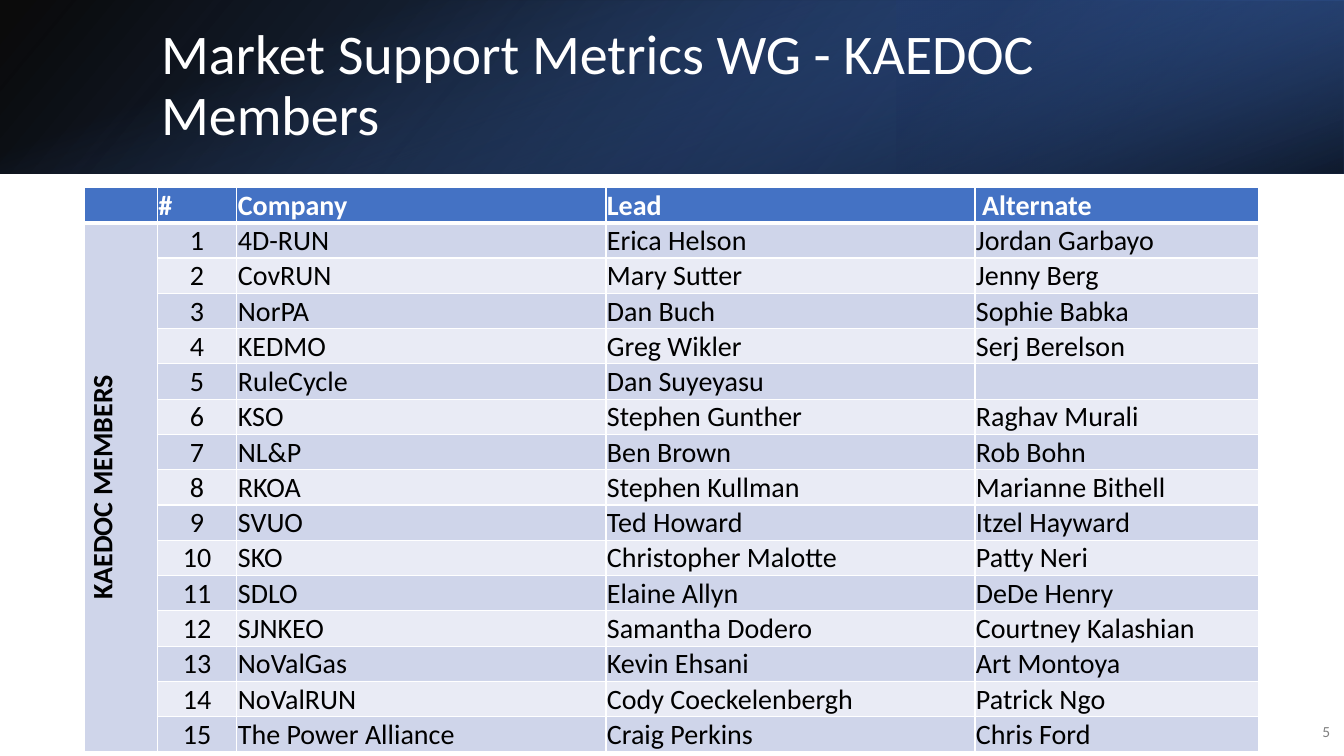
from lxml.etree import SubElement
from pptx import Presentation
from pptx.dml.color import RGBColor
from pptx.enum.shapes import MSO_SHAPE as SHAPE
from pptx.enum.text import MSO_ANCHOR as ANCHOR, PP_ALIGN as ALIGN
from pptx.oxml.ns import qn
from pptx.util import Inches, Pt


def rgb(value):
    return RGBColor.from_string(value)


def add_text(tf, text, size, color, bold=False, align=ALIGN.LEFT):
    p = tf.paragraphs[0]
    p.alignment = align
    p.font.size = Pt(size)
    r = p.add_run()
    r.text = text
    r.font.name = "Calibri"
    r.font.size = Pt(size)
    r.font.bold = bold
    r.font.color.rgb = rgb(color)
    return p


prs = Presentation()
prs.slide_width, prs.slide_height = Inches(13.33), Inches(7.5)
s = prs.slides.add_slide(prs.slide_layouts[6])

banner_layers = [
    ((0, 0, 13.33, 1.72), 0, True, 140, [(0, "000000", 96), (100, "2F5597", 100)]),
    ((8.89, 0, 4.44, 1.72), 180, True, 320, [(19, "203864", 68), (100, "4472C4", 79)]),
    ((5.8, -5.8, 1.72, 13.33), 90, False, 340, [(23, "4472C4", 0), (99, "000000", 74)]),
]
for box, rotation, flipped, angle, stops in banner_layers:
    sp = s.shapes.add_shape(SHAPE.RECTANGLE, *map(Inches, box))
    sp.shadow.inherit = False
    sp.rotation = rotation
    if flipped:
        sp._element.spPr.find(qn("a:xfrm")).set("flipH", "1")
    sp.line.fill.background()
    sp.fill.gradient()
    sp.fill.gradient_angle = 360 - angle
    for stop, (position, color, _) in zip(sp.fill.gradient_stops, stops):
        stop.position = position / 100
        stop.color.rgb = rgb(color)
    colors = sp._element.spPr.find(qn("a:gradFill")).iter(qn("a:srgbClr"))
    for clr, (_, _, opacity) in zip(colors, stops):
        SubElement(clr, qn("a:alpha")).set("val", str(opacity * 1000))

labels = [
    ((1.5, 0.38, 10.9, 0.96), "Market Support Metrics WG - KAEDOC Members", 40, "FFFFFF", ALIGN.LEFT, 0.9, 0),
    ((12.8, 7.06, 0.49, 0.4), "5", 11, "808080", ALIGN.RIGHT, 1.0, 6),
]
for box, text, size, color, align, spacing, after in labels:
    tf = s.shapes.add_textbox(*map(Inches, box)).text_frame
    tf.word_wrap = True
    tf.vertical_anchor = ANCHOR.MIDDLE
    if align == ALIGN.LEFT:
        tf.margin_right = Inches(0.3)
    p = add_text(tf, text, size, color, align=align)
    p.line_spacing = spacing
    p.space_after = Pt(after)

members = [
    ("4D-RUN", "Erica Helson", "Jordan Garbayo"),
    ("CovRUN", "Mary Sutter", "Jenny Berg"),
    ("NorPA", "Dan Buch", "Sophie Babka"),
    ("KEDMO", "Greg Wikler", "Serj Berelson"),
    ("RuleCycle", "Dan Suyeyasu", ""),
    ("KSO", "Stephen Gunther", "Raghav Murali"),
    ("NL&P", "Ben Brown", "Rob Bohn"),
    ("RKOA", "Stephen Kullman", "Marianne Bithell"),
    ("SVUO", "Ted Howard", "Itzel Hayward"),
    ("SKO", "Christopher Malotte", "Patty Neri"),
    ("SDLO", "Elaine Allyn", "DeDe Henry"),
    ("SJNKEO", "Samantha Dodero", "Courtney Kalashian"),
    ("NoValGas", "Kevin Ehsani", "Art Montoya"),
    ("NoValRUN", "Cody Coeckelenbergh", "Patrick Ngo"),
    ("The Power Alliance", "Craig Perkins", "Chris Ford"),
]
rows = [("", "#", "Company", "Lead", " Alternate")]
rows += [("", str(n), *member) for n, member in enumerate(members, 1)]
rows[1] = ("KAEDOC MEMBERS", *rows[1][1:])
widths = [0.72, 0.79, 3.66, 3.66, 2.81]

table = s.shapes.add_table(
    len(rows), len(widths), Inches(0.84), Inches(1.86), Inches(sum(widths)), Inches(0.35 * len(rows))
).table
for column, width in zip(table.columns, widths):
    column.width = Inches(width)
for i, row in enumerate(rows):
    table.rows[i].height = Inches(0.35)
    for j, text in enumerate(row):
        cell = table.cell(i, j)
        header, side = i == 0, i > 0 and j == 0
        cell.margin_left = cell.margin_right = cell.margin_top = Inches(0.01)
        cell.margin_bottom = 0
        cell.vertical_anchor = ANCHOR.MIDDLE if side else ANCHOR.BOTTOM
        tcPr = cell._tc.get_or_add_tcPr()
        for edge in "LRTB":
            thick = (i, edge) in ((0, "B"), (1, "T"))
            ln = SubElement(tcPr, qn("a:ln" + edge), w=str(Pt(3 if thick else 1)))
            SubElement(SubElement(ln, qn("a:solidFill")), qn("a:srgbClr")).set("val", "FFFFFF")
        cell.fill.solid()
        cell.fill.fore_color.rgb = rgb("4472C4" if header else "CFD5EA" if side or i % 2 else "E9EBF5")
        if text:
            align = ALIGN.CENTER if i and j < 2 else ALIGN.LEFT
            add_text(cell.text_frame, text, 20, "FFFFFF" if header else "000000", header or side, align)
        else:
            cell.text_frame.paragraphs[0].font.size = Pt(12)
table.cell(1, 0).merge(table.cell(len(rows) - 1, 0))
table.cell(1, 0)._tc.get_or_add_tcPr().set("vert", "vert270")

prs.save("out.pptx")
